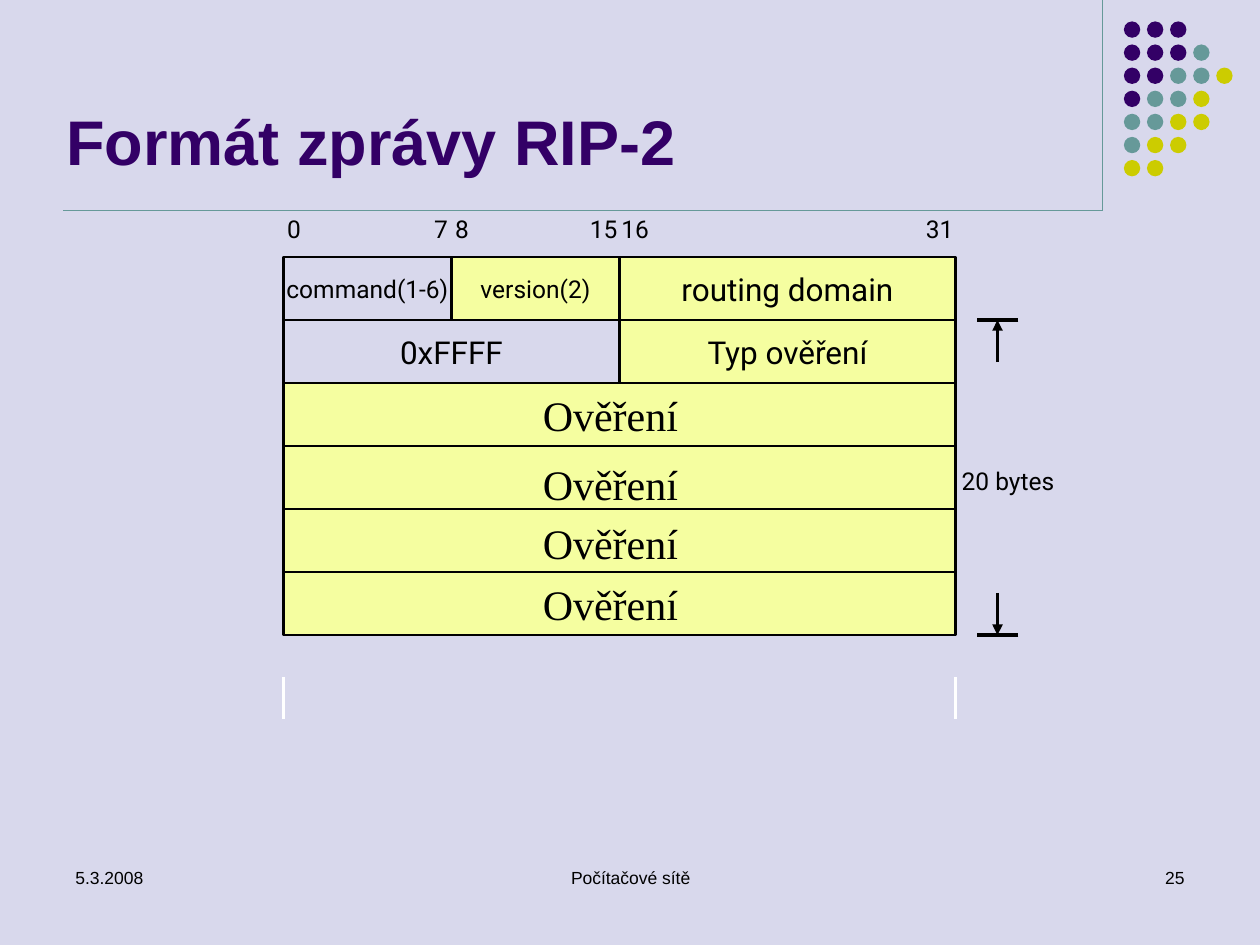
"""Build the slide showing the layout of a RIP-2 message."""
from lxml import etree
from pptx import Presentation
from pptx.dml.color import RGBColor
from pptx.enum.shapes import MSO_CONNECTOR, MSO_SHAPE
from pptx.enum.text import MSO_ANCHOR, PP_ALIGN
from pptx.oxml.ns import qn
from pptx.util import Inches, Pt

LAVENDER = RGBColor(0xD8, 0xD8, 0xEC)
PURPLE = RGBColor(0x33, 0x00, 0x66)
TEAL = RGBColor(0x66, 0x99, 0x99)
OLIVE = RGBColor(0xCC, 0xCC, 0x00)
YELLOW = RGBColor(0xF5, 0xFE, 0xA0)
BLACK = RGBColor(0, 0, 0)
WHITE = RGBColor(0xFF, 0xFF, 0xFF)

BIT = Inches(1) / 6
ROW = Inches(0.5)
LEFT, TOP = Inches(2.25), Inches(2.04)
BOTTOM = TOP + 6 * ROW
RIGHT = LEFT + 32 * BIT

deck = Presentation()
deck.slide_width, deck.slide_height = Inches(10), Inches(7.5)
slide = deck.slides.add_slide(deck.slide_layouts[6])
slide.background.fill.solid()
slide.background.fill.fore_color.rgb = LAVENDER
shapes = slide.shapes


def write(frame, text, size, font="Roboto", align=PP_ALIGN.CENTER,
          anchor=MSO_ANCHOR.TOP, wrap=True, inset=True, color=BLACK, bold=False):
    frame.word_wrap = wrap
    frame.vertical_anchor = anchor
    if not inset:
        frame.margin_left = frame.margin_right = 0
        frame.margin_top = frame.margin_bottom = 0
    paragraph = frame.paragraphs[0]
    paragraph.text = text
    paragraph.alignment = align
    paragraph.font.size = Pt(size)
    paragraph.font.name = font
    paragraph.font.bold = bold
    paragraph.font.color.rgb = color


def draw_line(x1, y1, x2, y2, color, width, arrow=False):
    ends = [int(end) for end in (x1, y1, x2, y2)]
    line = shapes.add_connector(MSO_CONNECTOR.STRAIGHT, *ends)
    line.line.color.rgb = color
    line.line.width = Pt(width)
    properties = line.line._get_or_add_ln()
    if arrow:
        etree.SubElement(properties, qn("a:tailEnd"), type="triangle")
    etree.SubElement(properties.getparent(), qn("a:effectLst"))


corner_x, corner_y = Inches(8.75), Inches(1.67)
draw_line(corner_x, 0, corner_x, corner_y, TEAL, 0.75)
draw_line(Inches(0.5), corner_y, corner_x, corner_y, TEAL, 0.75)

dot_colors = {"P": PURPLE, "T": TEAL, "O": OLIVE}
dot_pitch, dot_size = Inches(0.18333), Inches(0.13)
for row, pattern in enumerate(["PPP", "PPPT", "PPTTO", "PTTO", "TTOO", "TOO", "OO"]):
    for column, letter in enumerate(pattern):
        dot = shapes.add_shape(
            MSO_SHAPE.OVAL, Inches(8.92) + column * dot_pitch,
            Inches(0.17) + row * dot_pitch, dot_size, dot_size)
        dot.shadow.inherit = False
        dot.fill.solid()
        dot.fill.fore_color.rgb = dot_colors[letter]
        dot.line.fill.background()

title = shapes.add_textbox(Inches(0.43), Inches(0.21), Inches(9), Inches(1.25))
write(title.text_frame, "Formát zprávy RIP-2", 36, "Arial", PP_ALIGN.LEFT,
      MSO_ANCHOR.BOTTOM, color=PURPLE, bold=True)

for text, left, width, align in [
    ("5.3.2008", 0.5, 2.33, PP_ALIGN.LEFT),
    ("Počítačové sítě", 3.42, 3.17, PP_ALIGN.CENTER),
    ("25", 7.17, 2.33, PP_ALIGN.RIGHT),
]:
    footer = shapes.add_textbox(Inches(left), Inches(6.83), Inches(width), ROW)
    write(footer.text_frame, text, 10, "Arial", align)

for edge in (LEFT, RIGHT):
    draw_line(edge, BOTTOM + 2 * BIT, edge, BOTTOM + 4 * BIT, WHITE, 2)

fields = [
    (0, 0, 8, "command(1-6)", 14, None),
    (0, 8, 8, "version(2)", 14, YELLOW),
    (0, 16, 16, "routing domain", 18, YELLOW),
    (1, 0, 16, "0xFFFF", 18, None),
    (1, 16, 16, "Typ ověření", 18, YELLOW),
] + [(row, 0, 32, "", 18, YELLOW) for row in range(2, 6)]
for row, first_bit, bits, text, size, fill in fields:
    field = shapes.add_shape(
        MSO_SHAPE.RECTANGLE, int(LEFT + first_bit * BIT), TOP + row * ROW,
        int(bits * BIT), ROW)
    field.shadow.inherit = False
    if fill is None:
        field.fill.background()
    else:
        field.fill.solid()
        field.fill.fore_color.rgb = fill
    field.line.color.rgb = BLACK
    field.line.width = Pt(1.5)
    if text:
        write(field.text_frame, text, size, anchor=MSO_ANCHOR.MIDDLE, wrap=False)

for text, first_bit, bits, top in [
    ("0", 0, 1, 1.7), ("7", 7, 1, 1.7), ("8", 8, 1, 1.7),
    ("15", 14.5, 1.5, 1.7), ("16", 16, 1.5, 1.7), ("31", 30.5, 1.5, 1.7),
    ("20 bytes", 32, 5, 3.7),
]:
    mark = shapes.add_textbox(
        int(LEFT + first_bit * BIT), Inches(top), int(bits * BIT), Inches(0.23))
    write(mark.text_frame, text, 14, inset=False)

for top in (3.04, 3.59, 4.06, 4.54):
    authentication = shapes.add_textbox(Inches(4.21), Inches(top), Inches(1.27), ROW)
    write(authentication.text_frame, "Ověření", 24, "Times New Roman",
          PP_ALIGN.LEFT, wrap=False)

arrow_x = LEFT + 34 * BIT
for limit, inward in [(TOP + ROW, 2 * BIT), (BOTTOM, -2 * BIT)]:
    draw_line(arrow_x + BIT, limit, arrow_x - BIT, limit, BLACK, 2)
    draw_line(arrow_x, limit + inward, arrow_x, limit, BLACK, 2, arrow=True)

deck.save("out.pptx")
